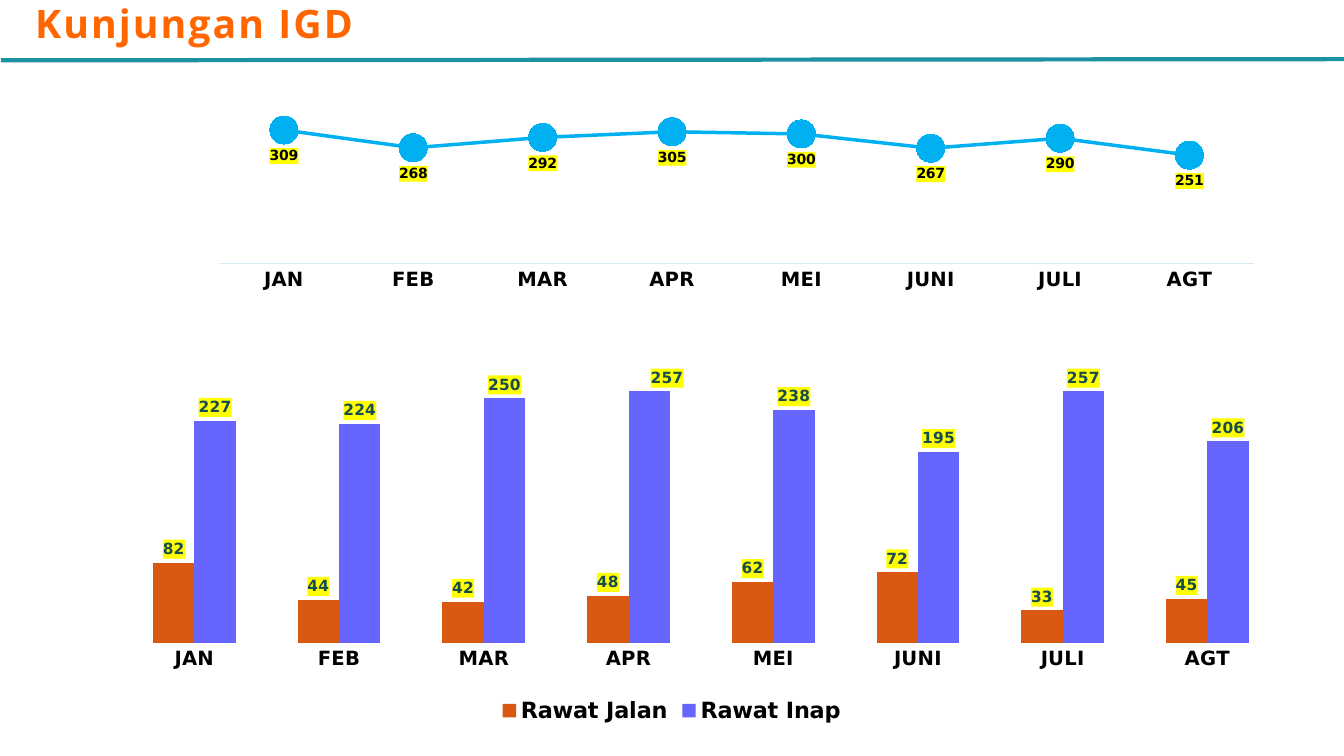
import lxml.etree
import pptx
import pptx.chart.data
import pptx.dml.color
import pptx.enum.chart
import pptx.enum.shapes
import pptx.enum.text
import pptx.oxml
import pptx.oxml.ns
import pptx.util
from pptx.util import Cm

RGBColor = pptx.dml.color.RGBColor
ORANGE = RGBColor(0xFF, 0x66, 0x00)
TEAL = RGBColor(0x1B, 0x91, 0xA1)
DARK_TEAL = RGBColor(0x16, 0x4B, 0x4F)
PALE_TEAL = RGBColor(0xCF, 0xEF, 0xF2)
RUST = RGBColor(0xDA, 0x59, 0x12)
VIOLET = RGBColor(0x66, 0x66, 0xFF)
SKY = RGBColor(0x00, 0xB0, 0xF0)
YELLOW = RGBColor(0xFF, 0xFF, 0x00)
BLACK = RGBColor(0, 0, 0)

LABEL_FONT = "DejaVu Sans"
MONTHS = ["JAN", "FEB", "MAR", "APR", "MEI", "JUNI", "JULI", "AGT"]
VISITS = [309, 268, 292, 305, 300, 267, 290, 251]
OUTPATIENT = [82, 44, 42, 48, 62, 72, 33, 45]
INPATIENT = [227, 224, 250, 257, 238, 195, 257, 206]


def style_font(font, name, size, color, bold=True):
    font.name = name
    font.size = pptx.util.Pt(size)
    font.bold = bold
    font.color.rgb = color


def chart_xml(body):
    return pptx.oxml.parse_xml(
        f'<c:{body[0]} {pptx.oxml.ns.nsdecls("c", "a")}>{body[1]}</c:{body[0]}>'
    )


def manual_layout(x, y, size=None):
    modes = '<c:xMode val="edge"/><c:yMode val="edge"/>' if size else ""
    target = '<c:layoutTarget val="inner"/>' if size else ""
    extent = f'<c:w val="{size[0]}"/><c:h val="{size[1]}"/>' if size else ""
    return chart_xml(("layout", f'<c:manualLayout>{target}{modes}<c:x val="{x}"/>'
                      f'<c:y val="{y}"/>{extent}</c:manualLayout>'))


def add_monthly_chart(slide, box, kind, series, base_font, maximum, plot_box):
    data = pptx.chart.data.CategoryChartData(number_format="#,##0")
    data.categories = MONTHS
    for name, values in series:
        data.add_series(name, values)
    chart = slide.shapes.add_chart(kind, *box, data).chart
    chart.has_title = False
    chart.has_legend = False
    style_font(chart.font, *base_font, bold=False)

    months = chart.category_axis
    months.major_tick_mark = pptx.enum.chart.XL_TICK_MARK.NONE
    months.has_major_gridlines = False
    style_font(months.tick_labels.font, LABEL_FONT, 14, BLACK)
    counts = chart.value_axis
    counts.minimum_scale = 0
    counts.maximum_scale = maximum
    counts.has_major_gridlines = False
    counts.visible = False

    plot_area = chart.element.xpath("c:chart/c:plotArea")[0]
    for layout in plot_area.xpath("c:layout"):
        plot_area.remove(layout)
    plot_area.insert(0, manual_layout(*plot_box))
    return chart


def label_values(series, size, color, position):
    labels = series.data_labels
    labels.show_value = True
    labels.position = position
    style_font(labels.font, LABEL_FONT, size, color)


def highlight_labels(chart):
    for text in chart.element.xpath(".//c:dLbls//c:txPr"):
        text.addprevious(chart_xml((
            "spPr", f'<a:solidFill><a:srgbClr val="{YELLOW}"/></a:solidFill>')))


def add_header(slide, box):
    left, top, width, height = box
    rule = slide.shapes.add_connector(
        pptx.enum.shapes.MSO_CONNECTOR.STRAIGHT,
        left, top + height, left + width, top + height - Cm(0.03))
    rule.line.color.rgb = TEAL
    rule.line.width = pptx.util.Pt(3)
    lxml.etree.SubElement(rule.element.spPr, pptx.oxml.ns.qn("a:effectLst"))

    title = slide.shapes.add_textbox(
        left + Cm(0.39), top - Cm(0.13), Cm(8.97), Cm(1.45)).text_frame
    title.word_wrap = False
    title.auto_size = pptx.enum.text.MSO_AUTO_SIZE.SHAPE_TO_FIT_TEXT
    paragraph = title.paragraphs[0]
    paragraph.alignment = pptx.enum.text.PP_ALIGN.CENTER
    run = paragraph.add_run()
    run.text = "Kunjungan IGD"
    style_font(run.font, "Open Sans", 28, ORANGE)
    run.font._element.set("spc", "150")


def add_care_chart(slide, box):
    outside = pptx.enum.chart.XL_LABEL_POSITION.OUTSIDE_END
    chart = add_monthly_chart(
        slide, box, pptx.enum.chart.XL_CHART_TYPE.COLUMN_CLUSTERED,
        [("Rawat Jalan", OUTPATIENT), ("Rawat Inap", INPATIENT)],
        ("Arial", 10, DARK_TEAL), 300, (0.069, 0.007, (0.908, 0.77)))
    chart.category_axis.format.line.fill.background()
    chart.has_legend = True
    chart.legend.position = pptx.enum.chart.XL_LEGEND_POSITION.BOTTOM
    chart.legend.include_in_layout = False
    style_font(chart.legend.font, LABEL_FONT, 16, BLACK)

    plot = chart.plots[0]
    plot.gap_width = 150
    plot.overlap = 0
    plot.vary_by_categories = False
    for care, color in zip(plot.series, (RUST, VIOLET)):
        care.format.fill.solid()
        care.format.fill.fore_color.rgb = color
        care.invert_if_negative = False
        label_values(care, 11, DARK_TEAL, outside)

    april = plot.series[1].points[MONTHS.index("APR")].data_label
    style_font(april.font, LABEL_FONT, 11, DARK_TEAL)
    april.position = outside
    chart.element.xpath(".//c:dLbl/c:idx")[0].addnext(manual_layout(0.014, 0))
    highlight_labels(chart)


def add_visits_chart(slide, box):
    chart = add_monthly_chart(
        slide, box, pptx.enum.chart.XL_CHART_TYPE.LINE_MARKERS,
        [("Series 1", VISITS)], ("Arial Narrow", 10.3, BLACK), 350,
        (0.101, 0.05, (0.882, 0.656)))
    axis_line = chart.category_axis.format.line
    axis_line.color.rgb = PALE_TEAL
    axis_line.width = pptx.util.Pt(0.84)

    chart.plots[0].vary_by_categories = False
    visits = chart.plots[0].series[0]
    visits.smooth = False
    visits.format.line.color.rgb = SKY
    visits.format.line.width = pptx.util.Pt(2.5)
    marker = visits.marker
    marker.style = pptx.enum.chart.XL_MARKER_STYLE.CIRCLE
    marker.size = 20
    marker.format.fill.solid()
    marker.format.fill.fore_color.rgb = SKY
    marker.format.line.color.rgb = SKY
    label_values(visits, 10, BLACK, pptx.enum.chart.XL_LABEL_POSITION.BELOW)
    visits.data_labels.number_format = "#,##0"
    visits.data_labels.number_format_is_linked = False
    highlight_labels(chart)


def main():
    deck = pptx.Presentation()
    deck.slide_width = Cm(33.87)
    deck.slide_height = Cm(19.05)
    slide = deck.slides.add_slide(deck.slide_layouts[6])
    add_header(slide, (Cm(0.02), Cm(0), Cm(33.85), Cm(1.52)))
    add_care_chart(slide, (Cm(0.86), Cm(8.74), Cm(32.13), Cm(9.6)))
    add_visits_chart(slide, (Cm(2.54), Cm(2.54), Cm(29.57), Cm(5.82)))
    deck.save("out.pptx")


if __name__ == "__main__":
    main()
